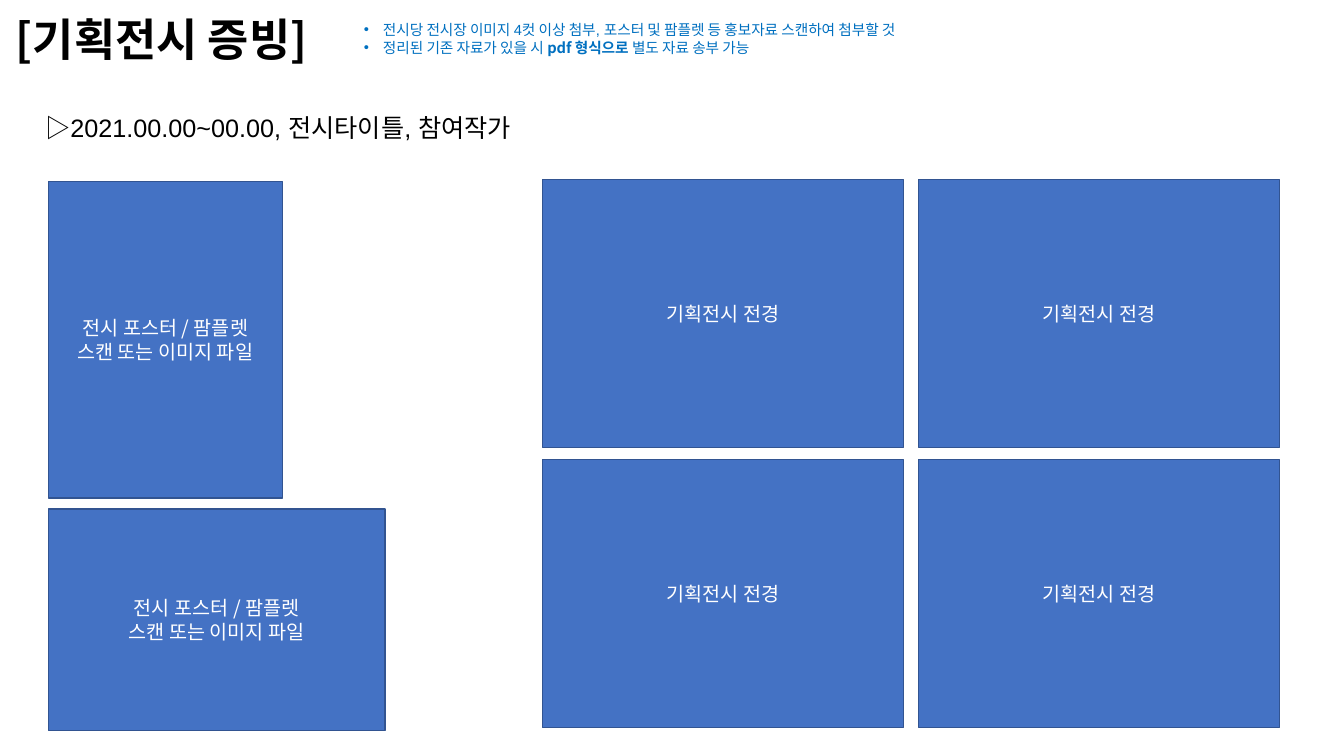
from lxml.etree import SubElement
from pptx import Presentation
from pptx.dml.color import RGBColor
from pptx.enum.shapes import MSO_SHAPE as Shape
from pptx.enum.text import MSO_ANCHOR as Anchor, PP_ALIGN as Align
from pptx.oxml.ns import qn
from pptx.util import Inches, Pt

COLORS = {"ink": "000000", "note": "0070C0", "panel": "4472C4",
          "edge": "325491", "label": "FFFFFF"}
KOREAN, LATIN = "Noto Sans CJK KR", "Arial"


def rgb(name):
    return RGBColor.from_string(COLORS[name])


def add_run(paragraph, text, size=14, color="ink", font=KOREAN, bold=False):
    run = paragraph.add_run()
    run.text = text
    run.font.size = Pt(size)
    run.font.bold = bold
    run.font.color.rgb = rgb(color)
    run.font.name = font
    SubElement(run.font._element, qn("a:ea"), typeface=KOREAN)


class ExhibitionSlide:
    def __init__(self, slide, bullet_indent=0.19):
        self.slide = slide
        self.bullet_indent = Inches(bullet_indent)

    def text(self, box, paragraphs, anchor=Anchor.TOP, bullet=False, spacing=None):
        frame = self.slide.shapes.add_textbox(*map(Inches, box)).text_frame
        frame.word_wrap = True
        frame.vertical_anchor = anchor
        for index, runs in enumerate(paragraphs):
            paragraph = frame.add_paragraph() if index else frame.paragraphs[0]
            paragraph.line_spacing = spacing
            if bullet:
                self.bullet(paragraph)
            for text, style in runs:
                add_run(paragraph, text, **style)

    def bullet(self, paragraph):
        properties = paragraph._p.get_or_add_pPr()
        properties.set("marL", str(self.bullet_indent))
        properties.set("indent", str(-self.bullet_indent))
        SubElement(properties, qn("a:buFont"), typeface=LATIN)
        SubElement(properties, qn("a:buChar"), char="•")

    def panel(self, box, lines):
        panel = self.slide.shapes.add_shape(Shape.RECTANGLE, *map(Inches, box))
        panel.shadow.inherit = False
        panel.fill.solid()
        panel.fill.fore_color.rgb = rgb("panel")
        panel.line.color.rgb = rgb("edge")
        panel.line.width = Pt(1)
        frame = panel.text_frame
        frame.word_wrap = True
        frame.vertical_anchor = Anchor.MIDDLE
        for index, line in enumerate(lines):
            paragraph = frame.add_paragraph() if index else frame.paragraphs[0]
            paragraph.alignment = Align.CENTER
            add_run(paragraph, line, color="label")


def main():
    deck = Presentation()
    deck.slide_width, deck.slide_height = Inches(13.33), Inches(7.5)
    page = ExhibitionSlide(deck.slides.add_slide(deck.slide_layouts[6]))

    page.text((0.06, 0.06, 11.5, 0.72),
              [[("[기획전시 증빙]", dict(size=32, bold=True))]],
              anchor=Anchor.MIDDLE, spacing=0.9)
    page.text((0.35, 1.07, 7.83, 0.4),
              [[("▷", dict(size=18)),
                ("2021.00.00~00.00, 전시타이틀, 참여작가", dict(size=18, font=LATIN))]])

    note = dict(size=10.5, color="note")
    page.text((3.51, 0.16, 6.72, 0.45), [
        [("전시당 전시장 이미지 4컷 이상 첨부, 포스터 및 팜플렛 등 홍보자료 스캔하여 첨부할 것",
          dict(note, font=LATIN))],
        [("정리된 기존 자료가 있을 시 ", note),
         ("pdf 형식으로 ", dict(note, bold=True)),
         ("별도 자료 송부 가능", note)],
    ], bullet=True)

    poster_label = ["전시 포스터 / 팜플렛", "스캔 또는 이미지 파일"]
    for poster in ((0.48, 1.8, 2.32, 3.14), (0.48, 5.05, 3.34, 2.2)):
        page.panel(poster, poster_label)

    for top in (1.78, 4.56):
        for left in (5.38, 9.11):
            page.panel((left, top, 3.58, 2.66), ["기획전시 전경"])

    deck.save("out.pptx")


if __name__ == "__main__":
    main()
